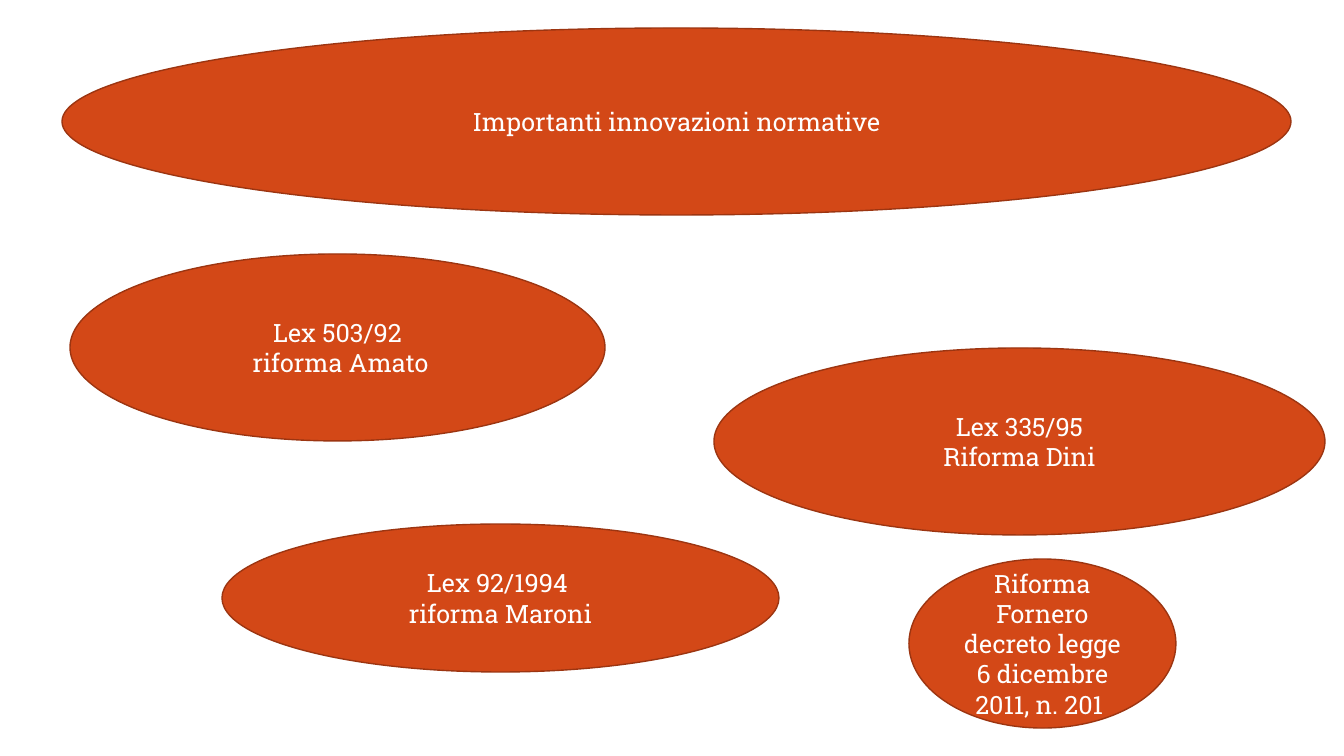
from pptx import Presentation
from pptx.dml.color import RGBColor
from pptx.enum.shapes import MSO_SHAPE
from pptx.enum.text import MSO_ANCHOR, PP_ALIGN
from pptx.util import Pt

EMU_PER_PX = 914400 / 100.8
COLORS = {"fill": "D34817", "outline": "9C3511", "text": "FFFFFF"}
FONT_FORMAT = {"name": "Roboto Slab", "size": Pt(18)}

HEADING = ((62, 28, 1229, 187), ["Importanti innovazioni normative"])
REFORMS = [
    ((70, 254, 535, 187), ["Lex 503/92", " riforma Amato"]),
    ((714, 348, 611, 187), ["Lex 335/95", "Riforma Dini"]),
    ((222, 524, 557, 148), ["Lex 92/1994 ", "riforma Maroni"]),
    ((909, 559, 267, 169), ["Riforma Fornero", "decreto legge 6 dicembre 2011, n. 201 "]),
]


def px(length):
    return round(length * EMU_PER_PX)


def color(name):
    return RGBColor.from_string(COLORS[name])


def add_ellipse(slide, box, lines):
    shape = slide.shapes.add_shape(MSO_SHAPE.OVAL, *map(px, box))
    shape.shadow.inherit = False
    shape.fill.solid()
    shape.fill.fore_color.rgb = color("fill")
    shape.line.color.rgb = color("outline")
    shape.line.width = Pt(1)

    text_frame = shape.text_frame
    text_frame.word_wrap = True
    text_frame.vertical_anchor = MSO_ANCHOR.MIDDLE
    text_frame.text = "\n".join(lines)
    for paragraph in text_frame.paragraphs:
        paragraph.alignment = PP_ALIGN.CENTER
        for run in paragraph.runs:
            for attribute, value in FONT_FORMAT.items():
                setattr(run.font, attribute, value)
            run.font.color.rgb = color("text")


def main():
    presentation = Presentation()
    presentation.slide_width = px(1344)
    presentation.slide_height = px(756)
    slide = presentation.slides.add_slide(presentation.slide_layouts.get_by_name("Blank"))
    for box, lines in [HEADING, *REFORMS]:
        add_ellipse(slide, box, lines)
    presentation.save("out.pptx")


if __name__ == "__main__":
    main()
